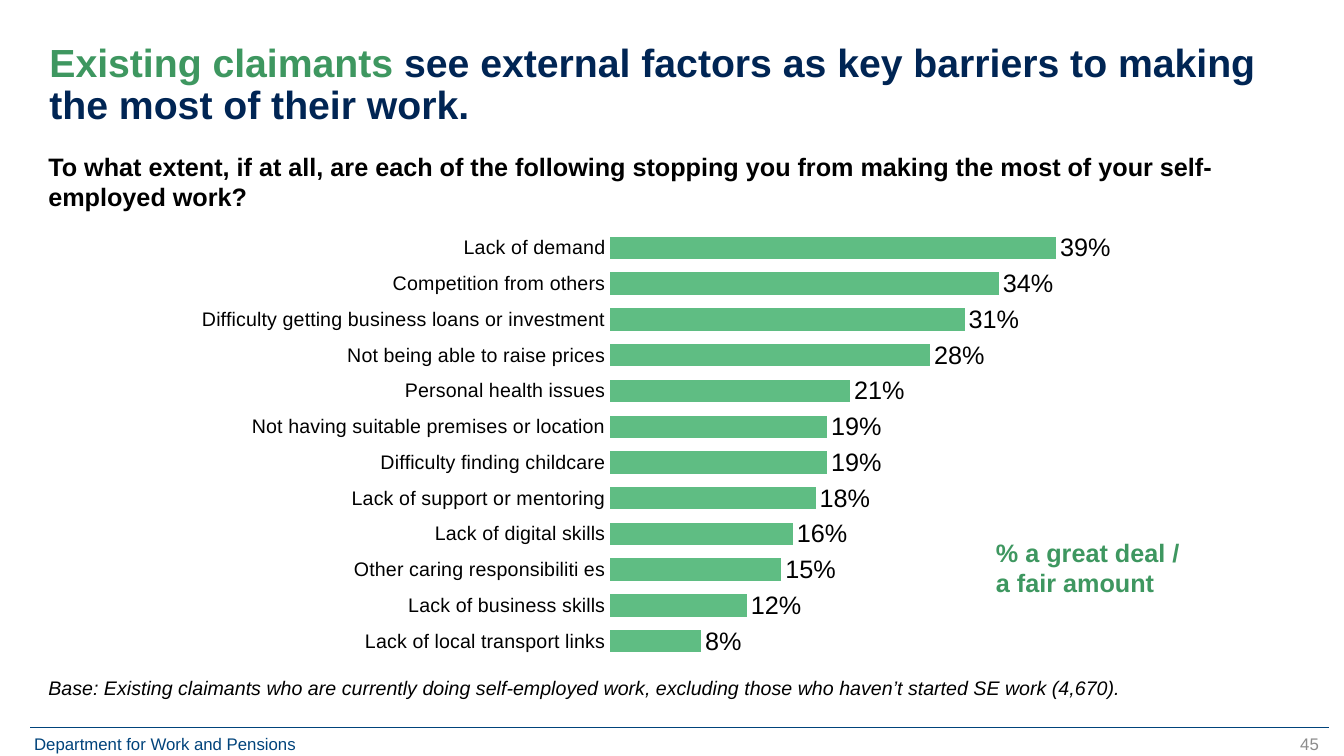
import pptx
import pptx.chart.data
import pptx.dml.color
import pptx.enum.chart
import pptx.enum.shapes
import pptx.enum.text
import pptx.oxml
import pptx.oxml.ns
import pptx.util

PX = 9144  # 100 px to the inch
COLOURS = {"navy": "002554", "green": "3E9760", "bar": "5FBD83",
           "blue": "00437B", "grey": "8C8C8C", "black": "000000"}
ALIGN = pptx.enum.text.PP_ALIGN


def set_font(font, colour, **values):
    font.name = "Arial"
    font.color.rgb = pptx.dml.color.RGBColor.from_string(COLOURS[colour])
    for name, value in values.items():
        setattr(font, name, value)


def fill_box(box, place, spans, inset=(0, 0), align=ALIGN.LEFT, **spacing):
    box.left, box.top, box.width, box.height = [n * PX for n in place]
    frame = box.text_frame
    side, edge = [n * PX for n in inset]
    frame_values = {"word_wrap": True, "auto_size": pptx.enum.text.MSO_AUTO_SIZE.NONE,
                    "vertical_anchor": pptx.enum.text.MSO_ANCHOR.TOP,
                    "margin_left": side, "margin_right": side,
                    "margin_top": edge, "margin_bottom": edge}
    for name, value in frame_values.items():
        setattr(frame, name, value)
    para = frame.paragraphs[0]
    para.alignment = align
    for name, value in spacing.items():
        setattr(para, name, value)
    for text, colour, size, values in spans:
        span = para.add_run()
        span.text = text
        set_font(span.font, colour, size=pptx.util.Pt(size), **values)


# Deck and page
deck = pptx.Presentation()
deck.slide_width, deck.slide_height = 1333 * PX, 750 * PX
page = deck.slides.add_slide(deck.slide_layouts[1])
shapes = page.shapes
bold = {"bold": True}
gaps = {"space_before": pptx.util.Pt(5), "space_after": pptx.util.Pt(5)}

# Footer rule
rule = shapes.add_connector(pptx.enum.shapes.MSO_CONNECTOR.STRAIGHT,
                            30 * PX, 722 * PX, 1318 * PX, 722 * PX)
rule.line.width = pptx.util.Pt(0.5)
rule.line.color.rgb = pptx.dml.color.RGBColor.from_string(COLOURS["blue"])
rule_properties = rule._element.spPr
rule_properties.append(pptx.oxml.parse_xml(
    f'<a:effectLst {pptx.oxml.ns.nsdecls("a")}/>'))

# Title
fill_box(shapes.title, (49, 43, 1234, 85),
         [("Existing claimants ", "green", 28, bold),
          ("see external factors as key barriers to making the most of their work.",
           "navy", 28, bold)], line_spacing=0.9)

# Base note, without a bullet
base = page.placeholders[1]
fill_box(base, (48, 671, 1236, 31),
         [("Base: Existing claimants who are currently doing self-employed work, "
           "excluding those who haven’t started SE work (4,670).",
           "black", 14, {"italic": True})], **gaps)
base_properties = base.text_frame.paragraphs[0]._p.get_or_add_pPr()
base_properties.set("marL", "0")
base_properties.set("indent", "0")
base_properties.append(pptx.oxml.parse_xml(
    f'<a:buNone {pptx.oxml.ns.nsdecls("a")}/>'))

# Question, chart key and footer
for place, spans, values in [
    ((48, 150, 1236, 48),
     [("To what extent, if at all, are each of the following stopping you from "
       "making the most of your self-employed work?", "black", 18, bold)], gaps),
    ((978, 528, 206, 70),
     [("% a great deal / a fair amount", "green", 18, bold)],
     {"inset": (10, 5), **gaps}),
    ((24, 723, 323, 30),
     [("Department for Work and Pensions", "blue", 12, {})],
     {"inset": (10, 5), "align": ALIGN.JUSTIFY}),
    ((1018, 723, 300, 40), [("45", "grey", 12, {})],
     {"inset": (10, 5), "align": ALIGN.RIGHT}),
]:
    fill_box(shapes.add_textbox(0, 0, 0, 0), place, spans, **values)

# Chart of barriers, listed from the bottom bar up
barriers = {
    "Lack of local transport links": 0.08,
    "Lack of business skills": 0.12,
    "Other caring responsibiliti es": 0.15,
    "Lack of digital skills": 0.16,
    "Lack of support or mentoring": 0.18,
    "Difficulty finding childcare": 0.19,
    "Not having suitable premises or location": 0.19,
    "Personal health issues": 0.21,
    "Not being able to raise prices": 0.28,
    "Difficulty getting business loans or investment": 0.31,
    "Competition from others": 0.34,
    "Lack of demand": 0.39,
}
data = pptx.chart.data.CategoryChartData(number_format="0%")
data.categories = list(barriers)
data.add_series("Series 1", list(barriers.values()))
chart = shapes.add_chart(pptx.enum.chart.XL_CHART_TYPE.BAR_CLUSTERED,
                         48 * PX, 224 * PX, 1136 * PX, 430 * PX, data).chart
chart.has_legend = False
chart.has_title = False
set_font(chart.font, "black", size=pptx.util.Pt(10))

# Axes
names = chart.category_axis
names.major_tick_mark = pptx.enum.chart.XL_TICK_MARK.NONE
names.format.line.fill.background()
set_font(names.tick_labels.font, "black", size=pptx.util.Pt(14))
axis_values = {"minimum_scale": 0, "maximum_scale": 0.45,
               "has_major_gridlines": False, "visible": False}
for name, value in axis_values.items():
    setattr(chart.value_axis, name, value)

# Bars and their labels
plot = chart.plots[0]
plot.gap_width = 59
plot.vary_by_categories = False
bars = plot.series[0]
bars.format.fill.solid()
bars.format.fill.fore_color.rgb = pptx.dml.color.RGBColor.from_string(COLOURS["bar"])
labels = bars.data_labels
label_values = {"show_value": True, "number_format": "0%",
                "number_format_is_linked": False,
                "position": pptx.enum.chart.XL_LABEL_POSITION.OUTSIDE_END}
for name, value in label_values.items():
    setattr(labels, name, value)
set_font(labels.font, "black", size=pptx.util.Pt(18))

# Plot area position, as shares of the chart
plot_area = chart._chartSpace.chart.plotArea
for old_layout in plot_area.findall(pptx.oxml.ns.qn("c:layout")):
    plot_area.remove(old_layout)
shares = {"x": 0.49, "y": 0.01, "w": 0.45, "h": 0.99}
modes = "".join(f'<c:{key}Mode val="edge"/>' for key in "xy")
sizes = "".join(f'<c:{key} val="{share}"/>' for key, share in shares.items())
plot_area.insert(0, pptx.oxml.parse_xml(
    f'<c:layout {pptx.oxml.ns.nsdecls("c")}><c:manualLayout>'
    f'<c:layoutTarget val="inner"/>{modes}{sizes}</c:manualLayout></c:layout>'))

deck.save("out.pptx")
